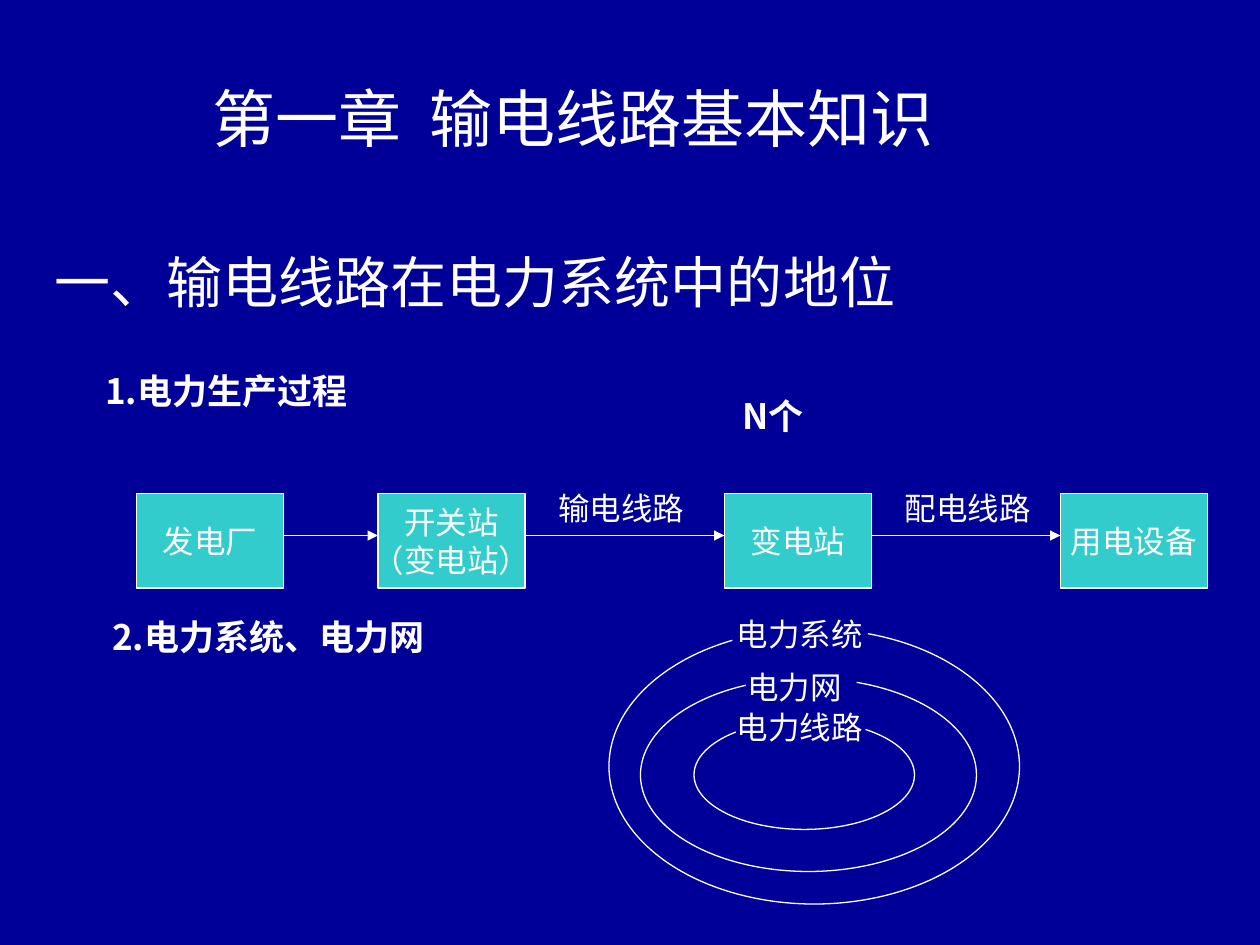
"""Build the slide on the place of transmission lines in a power system."""
from lxml import etree
from pptx import Presentation
from pptx.dml.color import RGBColor
from pptx.enum.shapes import MSO_CONNECTOR, MSO_SHAPE
from pptx.enum.text import MSO_ANCHOR, MSO_AUTO_SIZE, PP_ALIGN
from pptx.oxml.ns import qn
from pptx.util import Pt

PX = 7620
COLORS = {k: RGBColor.from_string(v) for k, v in {
    "back": "000099", "box": "33CCCC", "white": "FFFFFF"}.items()}
LATIN, CJK = "Lato", "Noto Sans CJK SC"


def add_run(p, text, size, font, bold=False):
    r = p.add_run()
    r.text = text
    r.font.size = Pt(size)
    r.font.name = font
    r.font.bold = bold
    r.font.color.rgb = COLORS["white"]


def setup_frame(sp, x, y, w, h, anchor=MSO_ANCHOR.TOP, wrap=True):
    sp.left, sp.top, sp.width, sp.height = x * PX, y * PX, w * PX, h * PX
    tf = sp.text_frame
    tf.auto_size = MSO_AUTO_SIZE.NONE
    tf.word_wrap = wrap
    tf.vertical_anchor = anchor
    return tf


prs = Presentation()
prs.slide_width, prs.slide_height = 1200 * PX, 900 * PX
s = prs.slides.add_slide(prs.slide_layouts[1])
s.background.fill.solid()
s.background.fill.fore_color.rgb = COLORS["back"]

tf = setup_frame(s.shapes.title, 190, 70, 870, 84)
p = tf.paragraphs[0]
p.alignment = PP_ALIGN.LEFT
add_run(p, "第一章  输电线路基本知识", 36, CJK)

tf = setup_frame(s.placeholders[1], 40, 230, 890, 180)
heading, item = tf.paragraphs[0], tf.add_paragraph()
for p, margin in ((heading, 0), (item, 48)):
    pPr = p._p.get_or_add_pPr()
    pPr.set("marL", str(margin * PX))
    pPr.set("indent", "0")
    etree.SubElement(pPr, qn("a:buNone"))
heading.space_before = Pt(0)
item.space_before = Pt(31)
add_run(heading, "一、", 32, LATIN)
add_run(heading, "输电线路在电力系统中的地位", 32, CJK)
add_run(item, "1.电力生产过程", 20, CJK, True)

arcs = [
    (580, 599, 391, 262, 292, 237),
    (610, 646, 320, 184, 297.5, 235),
    (661, 686, 210, 104, 323.5, 212),
]
for x, y, w, h, start, end in arcs:
    sp = s.shapes.add_shape(MSO_SHAPE.ARC, x * PX, y * PX, w * PX, h * PX)
    sp.adjustments[0], sp.adjustments[1] = start * 0.6, end * 0.6
    sp.shadow.inherit = False
    sp.fill.background()
    sp.line.color.rgb = COLORS["white"]
    sp.line.width = Pt(0.75)

labels = [
    ("电力系统", 690, 580, 160, 48, 18, LATIN, False),
    ("电力网", 700, 630, 120, 48, 18, LATIN, False),
    ("电力线路", 690, 668, 170, 48, 18, LATIN, False),
    ("输电线路", 520, 460, 150, 48, 18, LATIN, False),
    ("配电线路", 850, 460, 150, 48, 18, LATIN, False),
    ("2.电力系统、电力网", 95, 580, 455, 60, 20, CJK, True),
    ("N个", 695, 370, 455, 60, 20, CJK, True),
]
for text, x, y, w, h, size, font, bold in labels:
    tf = setup_frame(s.shapes.add_textbox(0, 0, 0, 0), x, y, w, h)
    add_run(tf.paragraphs[0], text, size, font, bold)

BOX_Y, BOX_W, BOX_H, LINE_Y = 470, 140, 90, 510
stages = [
    (130, ["发电厂"]),
    (360, ["开关站", "（变电站）"]),
    (690, ["变电站"]),
    (1010, ["用电设备"]),
]
for x, lines in stages:
    sp = s.shapes.add_shape(MSO_SHAPE.FLOWCHART_PROCESS, 0, 0, 0, 0)
    sp.shadow.inherit = False
    sp.fill.solid()
    sp.fill.fore_color.rgb = COLORS["box"]
    sp.line.color.rgb = COLORS["white"]
    sp.line.width = Pt(0.75)
    tf = setup_frame(sp, x, BOX_Y, BOX_W, BOX_H, MSO_ANCHOR.MIDDLE, False)
    for i, text in enumerate(lines):
        p = tf.add_paragraph() if i else tf.paragraphs[0]
        p.alignment = PP_ALIGN.CENTER
        add_run(p, text, 18, LATIN)

for (x1, _), (x2, _) in zip(stages, stages[1:]):
    ln = s.shapes.add_connector(MSO_CONNECTOR.STRAIGHT, (x1 + BOX_W) * PX,
                                LINE_Y * PX, x2 * PX, LINE_Y * PX)
    ln.line.color.rgb = COLORS["white"]
    ln.line.width = Pt(0.75)
    etree.SubElement(ln.line._get_or_add_ln(), qn("a:tailEnd"), type="triangle")
    etree.SubElement(ln._element.spPr, qn("a:effectLst"))

prs.save("out.pptx")
